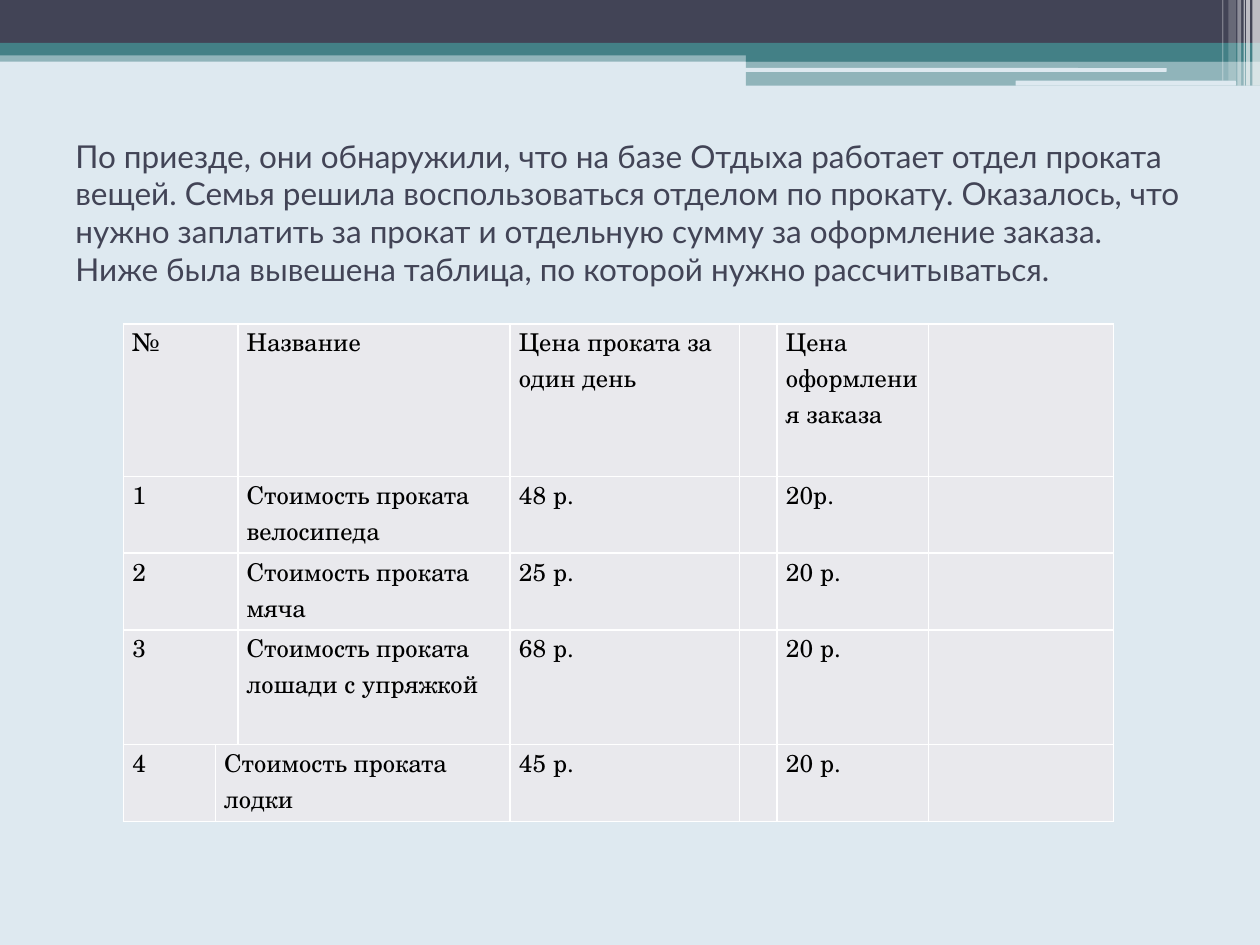
from lxml.etree import SubElement
from pptx import Presentation
from pptx.dml.color import RGBColor
from pptx.enum.shapes import MSO_SHAPE as SHAPE
from pptx.enum.text import MSO_ANCHOR as ANCHOR
from pptx.oxml.ns import qn
from pptx.util import Inches, Pt

NAVY, TEAL, PALE, WHITE = "424456", "438086", "DEE9F0", "FFFFFF"
CELL, BLACK = "E9E9ED", "000000"
TITLE_FONT, TABLE_FONT = "Lato", "TeX Gyre Schola"

TITLE = (
    "По приезде, они обнаружили, что на базе Отдыха работает отдел проката вещей. "
    "Семья решила воспользоваться отделом по прокату. Оказалось, что нужно заплатить "
    "за прокат и отдельную сумму за оформление заказа. Ниже была вывешена таблица, "
    "по которой нужно рассчитываться.\v"
)
COLS = [0.73, 0.11, 2.16, 1.82, 0.3, 1.2, 1.47]
ROWS = [1.21, 0.61, 0.61, 0.91, 0.61]
PRICES = [
    ("№", "Название", "Цена проката за один день", "Цена оформления заказа"),
    ("1", "Стоимость проката велосипеда", "48 р.", "20р."),
    ("2", "Стоимость проката мяча", "25 р.", "20 р."),
    ("3", "Стоимость проката лошади с упряжкой", "68 р.", "20 р."),
    ("4", "Стоимость проката\nлодки", "45 р.", "20 р."),
]


def rgb(color):
    """Turn a hex string into a colour."""
    return RGBColor.from_string(color)


def set_font(tf, name, size, color):
    """Format every run of a text frame."""
    for p in tf.paragraphs:
        for r in p.runs:
            r.font.name, r.font.size = name, Pt(size)
            r.font.color.rgb = rgb(color)


def add_bar(s, left, top, width, height, color, alpha=100, kind=SHAPE.RECTANGLE):
    """Add a plain bar, see-through if alpha is below 100."""
    sp = s.shapes.add_shape(kind, Inches(left), Inches(top), Inches(width), Inches(height))
    sp.shadow.inherit = False
    sp.line.fill.background()
    sp.fill.solid()
    sp.fill.fore_color.rgb = rgb(color)
    if alpha < 100:
        clr = sp._element.spPr.find(qn("a:solidFill"))[0]
        SubElement(clr, qn("a:alpha")).set("val", str(alpha * 1000))
    return sp


def add_header(s, left, top, width):
    """Draw the banded header with its stripes at the right edge."""
    right, step = left + width, left + 5.92
    add_bar(s, left, top + 0.4, width, 0.09, TEAL, 50)
    add_bar(s, left, top, width, 0.34, NAVY)
    add_bar(s, left, top + 0.34, width, 0.1, TEAL)
    add_bar(s, step, top + 0.39, right - step, 0.1, TEAL)
    add_bar(s, step, top + 0.48, right - step, 0.2, TEAL, 50)
    for x, y, w, h in [(5.91, 0.54, 3.35, 0.03), (8.06, 0.64, 1.75, 0.04)]:
        add_bar(s, left + x, top + y, w, h, PALE, kind=SHAPE.ROUNDED_RECTANGLE)
    stripes = [
        (0.06, 0.06, 0.68, 65), (0.11, 0.03, 0.68, 65), (0.13, 0.01, 0.68, 60),
        (0.18, 0.03, 0.68, 40), (0.25, 0.06, 0.64, 20), (0.3, 0.01, 0.64, 30),
    ]
    for offset, w, h, alpha in stripes:
        add_bar(s, right - offset, top, w, h, WHITE, alpha)


def add_title(s, left, top, width, height):
    """Place the introductory text."""
    tf = s.shapes.add_textbox(Inches(left), Inches(top), Inches(width), Inches(height)).text_frame
    tf.word_wrap = True
    tf.vertical_anchor = ANCHOR.MIDDLE
    tf.text = TITLE
    set_font(tf, TITLE_FONT, 18, NAVY)
    for br in tf._txBody.iter(qn("a:br")):
        SubElement(br, qn("a:rPr")).set("sz", "1800")


def style_cell(cell):
    """Give a cell its margins, white borders and fill."""
    cell.margin_left = cell.margin_right = Inches(0.07)
    cell.margin_top = cell.margin_bottom = 0
    tc_pr = cell._tc.get_or_add_tcPr()
    for side in ("lnL", "lnR", "lnT", "lnB"):
        ln = SubElement(tc_pr, qn(f"a:{side}"), w=str(Pt(1)))
        SubElement(SubElement(ln, qn("a:solidFill")), qn("a:srgbClr")).set("val", WHITE)
    cell.fill.solid()
    cell.fill.fore_color.rgb = rgb(CELL)


def add_prices(s, left, top):
    """Build the table of rental prices."""
    table = s.shapes.add_table(
        len(ROWS), len(COLS), Inches(left), Inches(top), Inches(sum(COLS)), Inches(sum(ROWS))
    ).table
    for col, width in zip(table.columns, COLS):
        col.width = Inches(width)
    for row, height in zip(table.rows, ROWS):
        row.height = Inches(height)
    for cell in table.iter_cells():
        style_cell(cell)
    last = len(ROWS) - 1
    for i, texts in enumerate(PRICES):
        start = 1 if i == last else 0
        table.cell(i, start).merge(table.cell(i, start + 1))
        name_col = 1 if i == last else 2
        for j, text in zip((0, name_col, 3, 5), texts):
            tf = table.cell(i, j).text_frame
            tf.text = text
            set_font(tf, TABLE_FONT, 14, BLACK)


def main():
    """Build and save the slide."""
    prs = Presentation()
    prs.slide_width, prs.slide_height = Inches(10), Inches(7.5)
    s = prs.slides.add_slide(prs.slide_layouts[6])
    s.background.fill.solid()
    s.background.fill.fore_color.rgb = rgb(PALE)
    add_header(s, 0, 0, 10)
    add_title(s, 0.5, 1.25, 9, 1.17)
    add_prices(s, 0.98, 2.57)
    prs.save("out.pptx")


if __name__ == "__main__":
    main()
